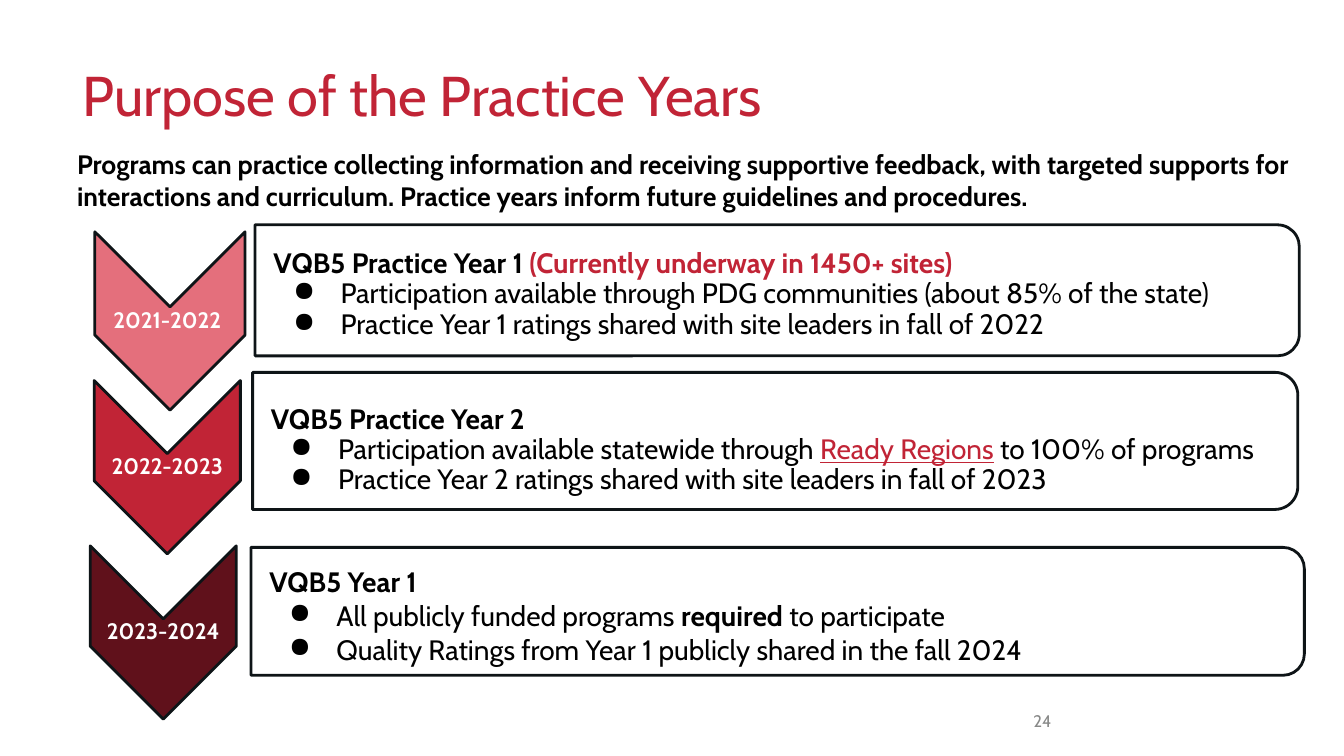
from dataclasses import dataclass
from lxml.etree import SubElement
from pptx import Presentation
from pptx.dml.color import RGBColor
from pptx.enum.shapes import MSO_SHAPE
from pptx.enum.text import MSO_ANCHOR, PP_ALIGN
from pptx.oxml.ns import qn
from pptx.util import Pt


@dataclass(frozen=True)
class Theme:
    font: str = "Cabin"
    red: str = "C12436"
    pink: str = "E46F7C"
    wine: str = "60111B"
    ink: str = "0E1417"
    black: str = "000000"
    white: str = "FFFFFF"
    gray: str = "888988"
    title: int = 40
    body: int = 20
    intro: int = 19
    label: int = 16
    number: int = 12


@dataclass(frozen=True)
class Box:
    left: float
    top: float
    width: float
    height: float

    def turn(self):
        shift = (self.width - self.height) / 2
        return Box(self.left + shift, self.top - shift, self.height, self.width)

    def move(self, right, down):
        return Box(self.left + right, self.top + down, self.width - right, self.height)

    def points(self):
        return [Pt(side) for side in (self.left, self.top, self.width, self.height)]


THEME = Theme()


def bullet(para):
    props = para._p.get_or_add_pPr()
    props.set("marL", str(Pt(48)))
    props.set("indent", str(Pt(-34)))
    color = SubElement(props, qn("a:buClr"))
    SubElement(color, qn("a:srgbClr"), val=THEME.black)
    SubElement(props, qn("a:buChar"), char="●")


def write(slide, box, lines, size, color=THEME.black, bold=False, inset=(0.7, 0.7),
          align=PP_ALIGN.LEFT, anchor=MSO_ANCHOR.MIDDLE, space=1.0):
    frame = slide.shapes.add_textbox(*box.points()).text_frame
    frame.word_wrap = True
    frame.vertical_anchor = anchor
    frame.margin_left, frame.margin_top = Pt(inset[0]), Pt(inset[1])
    frame.margin_right, frame.margin_bottom = Pt(min(inset[0], 9)), Pt(inset[1])
    for index, line in enumerate(lines):
        para = frame.paragraphs[0] if index == 0 else frame.add_paragraph()
        if index:
            bullet(para)
        para.alignment = align
        para.line_spacing = space
        for words, style in line:
            run = para.add_run()
            run.text = words
            font = run.font
            font.name = THEME.font
            font.size = Pt(size)
            font.bold = style.get("bold", bold)
            font.underline = style.get("under", False)
            font.color.rgb = RGBColor.from_string(style.get("color", color))


def draw(slide, kind, box, fill):
    shape = slide.shapes.add_shape(kind, *box.turn().points())
    shape.rotation = 90
    shape.shadow.inherit = False
    shape.fill.solid()
    shape.fill.fore_color.rgb = RGBColor.from_string(fill)
    shape.line.color.rgb = RGBColor.from_string(THEME.ink)
    shape.line.width = Pt(2)
    return shape


def arrow(slide, box, label, fill):
    draw(slide, MSO_SHAPE.CHEVRON, box, fill)
    write(slide, box, [[(label, {})]], THEME.label, color=THEME.white, bold=True,
          align=PP_ALIGN.CENTER, space=0.9)


def panel(slide, box, lines, drop, space):
    shape = draw(slide, MSO_SHAPE.ROUND_2_SAME_RECTANGLE, box, THEME.white)
    shape.adjustments[0] = 0.167
    shape.adjustments[1] = 0
    for color in shape._element.spPr.find(qn("a:solidFill")):
        SubElement(color, qn("a:alpha"), val="89000")
    write(slide, box.move(2.3, drop), lines, THEME.body, inset=(10.8, 0.7), space=space)


def header(slide, box):
    write(slide, Box(box.left + 5.8, box.top, 880, 105), [[("Purpose of the Practice Years", {})]],
          THEME.title, color=THEME.red, inset=(7.2, 3.6), space=0.9)
    intro = ("Programs can practice collecting information and receiving supportive feedback, "
             "with targeted supports for interactions and curriculum. "
             "Practice years inform future guidelines and procedures.")
    write(slide, Box(box.left, box.top + 78.5, box.width, 65.5), [[(intro, {})]], THEME.intro,
          bold=True, inset=(9, 9), anchor=MSO_ANCHOR.TOP)


def footer(slide, box):
    write(slide, box, [[("24", {})]], THEME.number, color=THEME.gray,
          inset=(7.2, 3.6), align=PP_ALIGN.RIGHT)


STRONG = {"bold": True}
ALERT = {"bold": True, "color": THEME.red}
LINK = {"under": True, "color": THEME.red}

ROWS = [
    ("2021-2022 ", THEME.pink, Box(67.7, 165.6, 107.3, 127.4), Box(182.2, 160.6, 745.9, 93.6), 3.2, 0.9, [
        [("VQB5 Practice Year 1 ", STRONG), ("(Currently underway in 1450+ sites)", ALERT)],
        [("Participation available through PDG communities (about 85% of the state)", {})],
        [("Practice Year 1 ratings shared with site leaders in fall of 2022", {})]]),
    ("2022-2023", THEME.red, Box(67.3, 271.8, 104.4, 123.8), Box(180.4, 266, 746.6, 97.9), 6.9, 0.9, [
        [("VQB5 Practice Year 2", STRONG)],
        [("Participation available statewide through ", {}), ("Ready Regions", LINK),
         (" to 100% of programs", {})],
        [("Practice Year 2 ratings shared with site leaders in fall of 2023", {})]]),
    ("2023-2024", THEME.wine, Box(64.4, 389.9, 104.4, 123.8), Box(179.3, 391, 752.4, 91.4), 2.8, 1.0, [
        [("VQB5 Year 1", STRONG)],
        [("All publicly funded programs ", {}), ("required", STRONG), (" to participate", {})],
        [("Quality Ratings from Year 1 publicly shared in the fall 2024", {})]]),
]


def main():
    deck = Presentation()
    deck.slide_width, deck.slide_height = Pt(960), Pt(540)
    slide = deck.slides.add_slide(deck.slide_layouts[6])
    header(slide, Box(46, 18, 893.5, 144))
    for label, fill, mark, card, drop, space, lines in ROWS:
        arrow(slide, mark, label, fill)
        panel(slide, card, lines, drop, space)
    footer(slide, Box(678.2, 500.4, 79.9, 28.8))
    deck.save("out.pptx")


if __name__ == "__main__":
    main()
